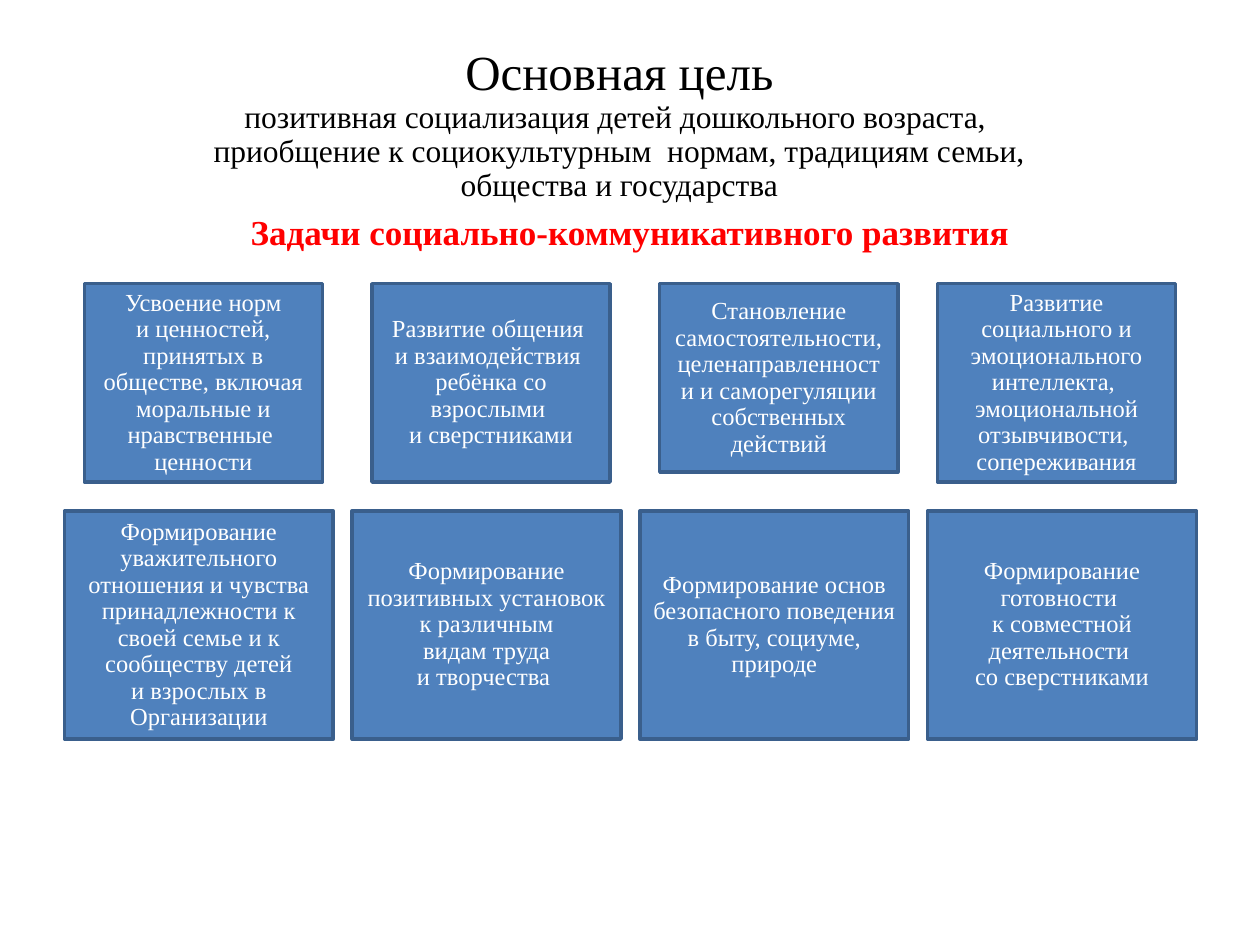
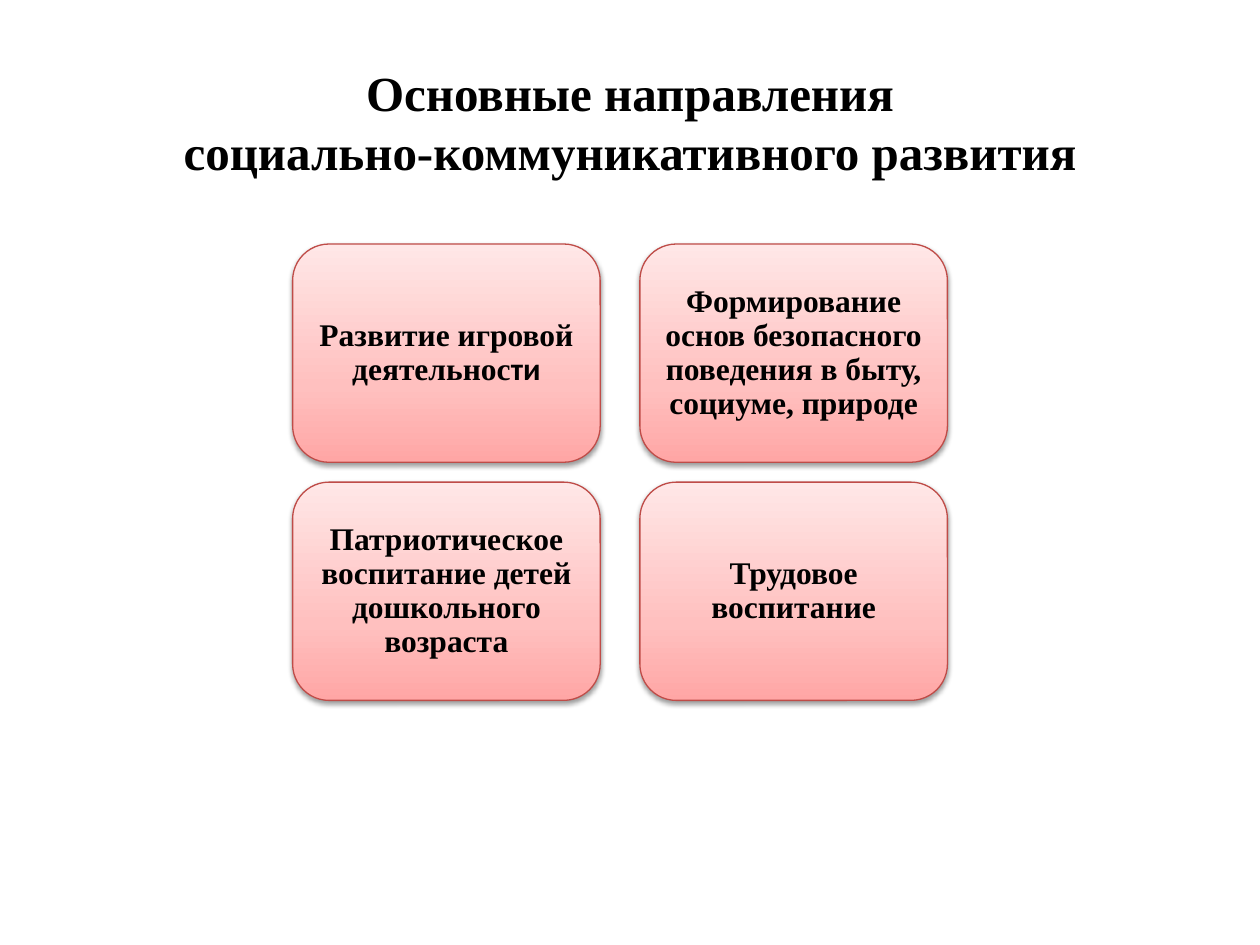
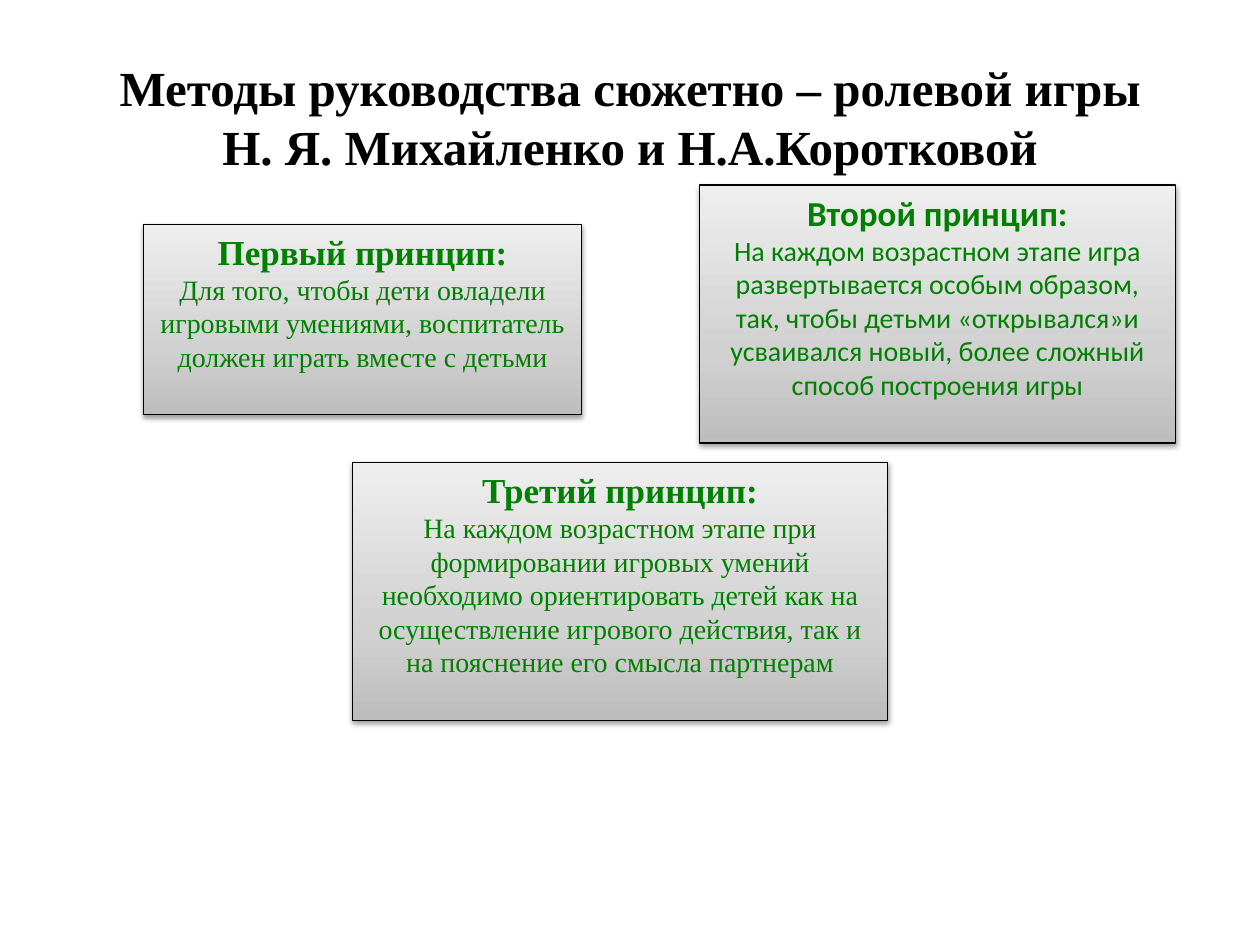
from pptx import Presentation
from pptx.dml.color import RGBColor
from pptx.enum.shapes import MSO_SHAPE
from pptx.enum.text import MSO_ANCHOR, PP_ALIGN
from pptx.oxml import parse_xml
from pptx.oxml.ns import nsdecls, qn
from pptx.util import Cm, Pt

# Content: a line is a string, or a list of (text, format changes) runs
GOAL = [
    [("Основная цель", {"size": Pt(28)})],
    "позитивная социализация детей дошкольного возраста, ",
    "приобщение к социокультурным  нормам, традициям семьи,",
    "общества и государства",
]
TASKS = "Задачи социально-коммуникативного развития"

# Upper tasks: left, height, lines
UPPER = [
    (1.7, 4, ["Усвоение норм",
              "и ценностей, принятых в обществе, включая моральные и нравственные ",
              "ценности"]),
    (7.5, 4, ["Развитие общения ", "и взаимодействия ",
              "ребёнка со взрослыми ", "и сверстниками"]),
    (13.3, 3.8, ["Становление самостоятельности, целенаправленности "
                 "и саморегуляции собственных действий"]),
    (18.9, 4, ["Развитие социального и эмоционального интеллекта, ",
               "эмоциональной отзывчивости, ", "сопереживания"]),
]
LOWER = [
    ["Формирование уважительного отношения и чувства принадлежности "
     "к своей семье и к сообществу детей", "и взрослых в Организации"],
    ["Формирование позитивных установок", "к различным",
     "видам труда", "и творчества "],
    ["Формирование основ безопасного поведения", "в быту, социуме, природе"],
    ["Формирование готовности ", "к совместной деятельности ",
     "со сверстниками"],
]

AREAS = ["Основные направления", "социально-коммуникативного развития"]
CARDS = [
    [("Развитие игровой деятельнос", {}), ("ти", {"name": "Calibri"})],
    "Формирование основ безопасного поведения в быту, социуме, природе",
    "Патриотическое воспитание детей дошкольного возраста",
    "Трудовое воспитание",
]

METHODS = ["Методы руководства сюжетно – ролевой игры",
           "Н. Я. Михайленко и Н.А.Коротковой"]
# Principles: box, font, heading, text
RULES = [
    ((2.9, 4.52, 8.82, 3.84), "Times New Roman", "Первый принцип:",
     "Для того, чтобы дети овладели игровыми умениями, воспитатель должен "
     "играть вместе с детьми"),
    ((14.1, 3.73, 9.6, 5.2), "Calibri", "Второй принцип:",
     "На каждом возрастном этапе игра развертывается особым образом, так, "
     "чтобы детьми «открывался»и усваивался новый, более сложный способ "
     "построения игры"),
    ((7.1, 9.32, 10.8, 5.2), "Times New Roman", "Третий принцип:",
     "На каждом возрастном этапе при формировании игровых умений необходимо "
     "ориентировать детей как на осуществление игрового действия, так и на "
     "пояснение его смысла партнерам"),
]

# Shared formats
BLUE, NAVY = "4F81BD", "3A5F8C"
PINK = [(0, "FFA6A5"), (35, "FFC0BF"), (100, "FFE7E7")]
GREY = [(0, "BDBDBD"), (35, "D1D1D1"), (100, "EEEEEE")]
BASE = {"name": "Times New Roman", "bold": False}
TITLE = {"size": Pt(28), "bold": True}


def tint(code):
    return RGBColor.from_string(code)


def write(frame, lines, color, look, tight=1.0, anchor=MSO_ANCHOR.MIDDLE):
    """Fill a frame with centred lines, one paragraph each."""
    frame.word_wrap = True
    frame.vertical_anchor = anchor
    for i, line in enumerate(lines):
        para = frame.add_paragraph() if i else frame.paragraphs[0]
        para.alignment = PP_ALIGN.CENTER
        para.line_spacing = tight
        runs = [(line, {})] if isinstance(line, str) else line
        for text, change in runs:
            run = para.add_run()
            run.text = text
            run.font.color.rgb = tint(color)
            for key, value in {**BASE, **look, **change}.items():
                setattr(run.font, key, value)


def label(slide, box, lines, color, look, **rest):
    frame = slide.shapes.add_textbox(*map(Cm, box)).text_frame
    write(frame, lines, color, look, **rest)
    return frame


def block(slide, kind, box, fill, edge, width):
    """Add a shape; a list of stops gives a gradient with a shadow."""
    shape = slide.shapes.add_shape(kind, *map(Cm, box))
    shape.shadow.inherit = False
    shape.line.color.rgb = tint(edge)
    shape.line.width = Pt(width)
    if isinstance(fill, str):
        shape.fill.solid()
        shape.fill.fore_color.rgb = tint(fill)
    else:
        shade(shape, fill)
    return shape.text_frame


def shade(shape, stops):
    props = shape._element.spPr
    marks = "".join(f'<a:gs pos="{pos * 1000}"><a:srgbClr val="{code}"/></a:gs>'
                    for pos, code in stops)
    props.insert(2, parse_xml(
        f'<a:gradFill {nsdecls("a")} rotWithShape="1"><a:gsLst>{marks}</a:gsLst>'
        '<a:lin ang="16200000" scaled="0"/></a:gradFill>'))
    props.find(qn("a:effectLst")).append(parse_xml(
        f'<a:outerShdw {nsdecls("a")} blurRad="{Pt(3.1)}" dist="{Pt(1.6)}" '
        'dir="5400000" rotWithShape="0"><a:srgbClr val="000000">'
        '<a:alpha val="38000"/></a:srgbClr></a:outerShdw>'))


def goals(slide):
    frame = label(slide, (1.27, 0.97, 22.43, 3.4), GOAL, "000000",
                  {"size": Pt(18)}, tight=0.9, anchor=MSO_ANCHOR.TOP)
    frame.margin_top = 0
    label(slide, (1.3, 4.11, 22.8, 1.12), [TASKS], "FF0000",
          {"size": Pt(20), "bold": True}, anchor=MSO_ANCHOR.TOP)
    # Two rows of tasks
    tasks = [((left, 5.72, 4.8, high), lines) for left, high, lines in UPPER]
    tasks += [((1.3 + 5.8 * i, 10.3, 5.42, 4.6), lines)
              for i, lines in enumerate(LOWER)]
    for box, lines in tasks:
        frame = block(slide, MSO_SHAPE.RECTANGLE, box, BLUE, NAVY, 2)
        write(frame, lines, "FFFFFF", {"size": Pt(14)}, tight=0.9)


def areas(slide):
    label(slide, (1.27, 0.86, 22.86, 3.18), AREAS, "000000", TITLE)
    # Grid of two by two cards
    for i, line in enumerate(CARDS):
        row, col = divmod(i, 2)
        box = (5.9 + 7 * col, 4.92 + 4.8 * row, 6.2, 4.4)
        frame = block(slide, MSO_SHAPE.ROUNDED_RECTANGLE, box, PINK,
                      "BF4C48", 0.75)
        write(frame, [line], "000000", {"size": Pt(18), "bold": True}, tight=0.9)


def methods(slide):
    label(slide, (1.27, 0.76, 22.86, 3.18), METHODS, "000000", TITLE)
    # Principles
    for box, font, head, text in RULES:
        frame = block(slide, MSO_SHAPE.RECTANGLE, box, GREY, "000000", 0.75)
        lines = [[(head, {"size": Pt(20), "bold": True})], text]
        write(frame, lines, "008000", {"name": font, "size": Pt(16)},
              anchor=MSO_ANCHOR.TOP)


def main():
    deck = Presentation()
    deck.slide_width, deck.slide_height = Cm(25.4), Cm(19.05)
    for draw in (goals, areas, methods):
        draw(deck.slides.add_slide(deck.slide_layouts[6]))
    deck.save("out.pptx")


if __name__ == "__main__":
    main()
